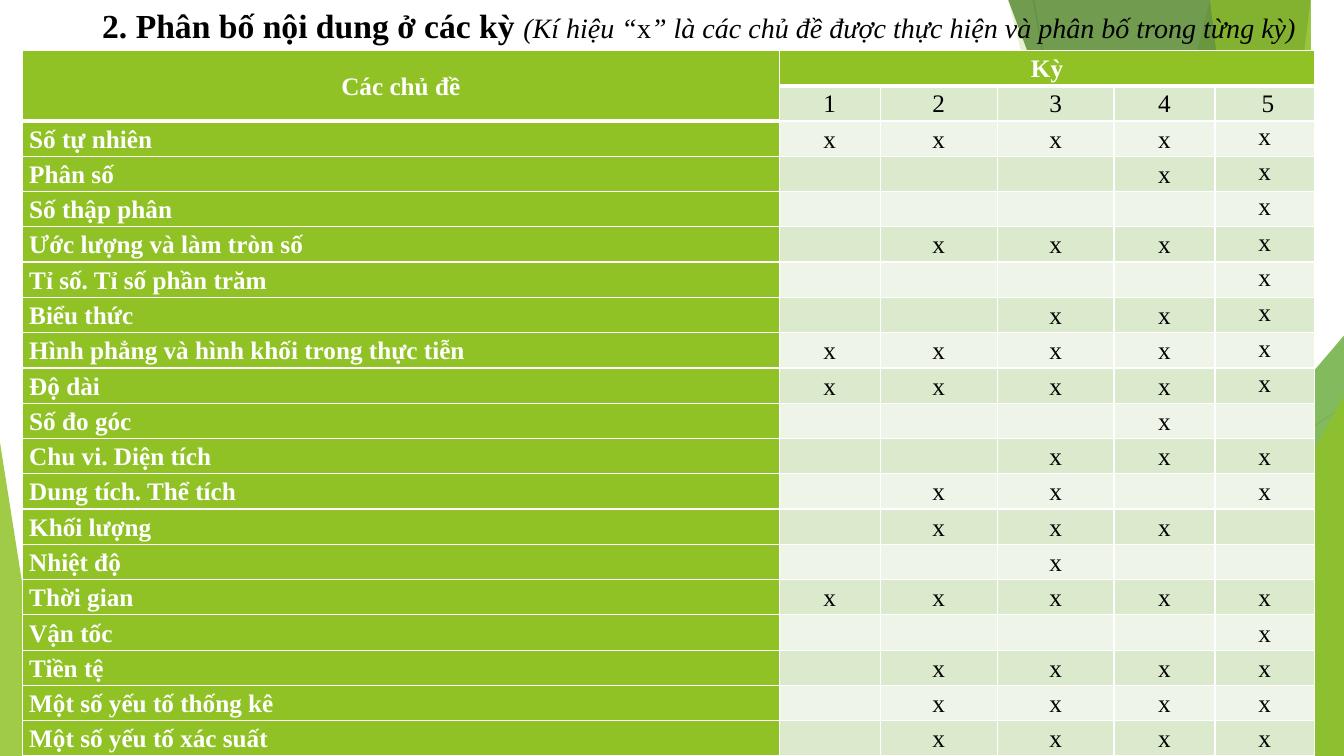
from dataclasses import dataclass
from typing import Optional

import pptx
import pptx.dml.color
import pptx.enum.shapes
import pptx.enum.text
import pptx.oxml
import pptx.oxml.ns
import pptx.util
from pptx.util import Inches

FONT = "Times New Roman"
WHITE, BLACK = "FFFFFF", "000000"
GREEN, DARK_BAND, LIGHT_BAND = "90C226", "DBE9CD", "EEF4E8"
MIDDLE = pptx.enum.text.MSO_ANCHOR.MIDDLE
TOP = pptx.enum.text.MSO_ANCHOR.TOP
CENTER = pptx.enum.text.PP_ALIGN.CENTER
LEFT = pptx.enum.text.PP_ALIGN.LEFT

ROW_HEIGHT = 0.35
COLUMN_WIDTHS = [7.51, 1, 1.16, 1.16, 1, 0.99]
TERMS = ["1", "2", "3", "4", " 5"]
LAST_TOP_ALIGNED_ROW = 9


@dataclass
class Topic:
    name: str
    terms: str


@dataclass
class Ray:
    start: tuple[float, float]
    end: tuple[float, float]
    color: str


@dataclass
class Facet:
    points: list[tuple[float, float]]
    color: str
    opacity: int


@dataclass
class Corner:
    left: float
    top: float
    width: float
    height: float
    apex: float
    color: str
    opacity: int


@dataclass
class TitleRun:
    text: str
    size: int
    bold: bool
    italic: bool


TOPICS = [
    Topic("Số tự nhiên", "12345"),
    Topic("Phân số", "45"),
    Topic("Số thập phân", "5"),
    Topic("Ước lượng và làm tròn số", "2345"),
    Topic("Tỉ số. Tỉ số phần trăm", "5"),
    Topic("Biểu thức", "345"),
    Topic("Hình phẳng và hình khối trong thực tiễn", "12345"),
    Topic("Độ dài", "12345"),
    Topic("Số đo góc", "4"),
    Topic("Chu vi. Diện tích", "345"),
    Topic("Dung tích. Thể tích", "235"),
    Topic("Khối lượng", "234"),
    Topic("Nhiệt độ", "3"),
    Topic("Thời gian", "12345"),
    Topic("Vận tốc", "5"),
    Topic("Tiền tệ", "2345"),
    Topic("Một số yếu tố thống kê", "2345"),
    Topic("Một số yếu tố xác suất", "2345"),
]
RIGHT_EDGE = [(13.33, -0.01), (13.33, 7.5)]
DECORATIONS = [
    Ray((10.25, 0), (11.58, 7.5), "BFBFBF"),
    Ray((13.33, 4.03), (8.12, 7.5), "D9D9D9"),
    Facet([(12.28, -0.01), *RIGHT_EDGE, (10.04, 7.5)], GREEN, 30),
    Facet([(10.5, -0.01), *RIGHT_EDGE, (11.83, 7.5)], GREEN, 20),
    Corner(9.77, 3.33, 3.56, 4.17, 1, "54A021", 72),
    Facet([(10.21, -0.01), *RIGHT_EDGE, (12.91, 7.5)], "3F7819", 70),
    Facet([(13.03, -0.01), *RIGHT_EDGE, (11.92, 7.5)], "C0E474", 70),
    Facet([(11.96, -0.01), *RIGHT_EDGE, (13.18, 7.5)], GREEN, 65),
    Corner(11.34, 3.93, 1.99, 3.57, 1, GREEN, 80),
    Corner(0, 4.39, 0.49, 3.11, 0, GREEN, 85),
]
TITLE_RUNS = [
    TitleRun("2. Phân bố nội dung ở các kỳ ", 24, True, False),
    TitleRun("(Kí hiệu “", 20, False, True),
    TitleRun("x", 20, False, False),
    TitleRun("” là các chủ đề được thực hiện và phân bố trong từng kỳ)", 20, False, True),
]


def rgb(color: str) -> pptx.dml.color.RGBColor:
    return pptx.dml.color.RGBColor.from_string(color)


def add_run(paragraph, text: str, size: int, color: str, bold: bool, italic: bool = False) -> None:
    run = paragraph.add_run()
    run.text = text
    run.font.name, run.font.size = FONT, pptx.util.Pt(size)
    run.font.bold, run.font.italic = bold, italic
    run.font.color.rgb = rgb(color)


def draw_decoration(shapes, item: Ray | Facet | Corner) -> None:
    if isinstance(item, Ray):
        line = shapes.add_connector(pptx.enum.shapes.MSO_CONNECTOR.STRAIGHT,
                                    *map(Inches, item.start + item.end))
        line.line.color.rgb = rgb(item.color)
        line.line.width = pptx.util.Pt(0.75)
        pptx.oxml.ns  # namespace map used by the element below
        line.element.spPr.append(pptx.oxml.parse_xml(
            f'<a:effectLst {pptx.oxml.ns.nsdecls("a")}/>'))
        return
    if isinstance(item, Facet):
        builder = shapes.build_freeform(*item.points[0], scale=Inches(1))
        builder.add_line_segments(item.points[1:], close=True)
        shape = builder.convert_to_shape()
    else:
        shape = shapes.add_shape(
            pptx.enum.shapes.MSO_SHAPE.ISOSCELES_TRIANGLE,
            *map(Inches, (item.left, item.top, item.width, item.height)))
        shape.adjustments[0] = item.apex
    shape.shadow.inherit = False
    shape.line.fill.background()
    shape.fill.solid()
    shape.fill.fore_color.rgb = rgb(item.color)
    color_element = shape.element.spPr.find(".//" + pptx.oxml.ns.qn("a:srgbClr"))
    color_element.append(pptx.oxml.parse_xml(
        f'<a:alpha {pptx.oxml.ns.nsdecls("a")} val="{item.opacity * 1000}"/>'))


def edge_weight(edge: int, column: int) -> int:
    """Points of the horizontal rule above row number `edge`; thick under the header."""
    return 3 if edge == 1 or (edge == 2 and column == 0) else 1


def style_cell(cell, row: int, column: int, fill: str) -> None:
    weights = {"lnL": 1, "lnR": 1, "lnT": edge_weight(row, column),
               "lnB": edge_weight(row + 1, column)}
    properties = cell._tc.get_or_add_tcPr()
    for side, weight in weights.items():
        properties.append(pptx.oxml.parse_xml(
            f'<a:{side} {pptx.oxml.ns.nsdecls("a")} w="{pptx.util.Pt(weight)}">'
            f'<a:solidFill><a:srgbClr val="{WHITE}"/></a:solidFill></a:{side}>'))
    cell.fill.solid()
    cell.fill.fore_color.rgb = rgb(fill)
    cell.margin_left = cell.margin_right = Inches(0.07)
    cell.margin_top = cell.margin_bottom = 0


def cell_text(row: int, column: int) -> Optional[str]:
    if row == 0:
        return {0: "Các chủ đề", 1: "Kỳ"}.get(column)
    if row == 1:
        return TERMS[column - 1] if column else None
    topic = TOPICS[row - 2]
    if column == 0:
        return topic.name
    return "x" if str(column) in topic.terms else None


def add_topic_table(slide) -> None:
    row_count = len(TOPICS) + 2
    table = slide.shapes.add_table(
        row_count, len(COLUMN_WIDTHS), Inches(0.22), Inches(0.5),
        Inches(sum(COLUMN_WIDTHS)), Inches(row_count * ROW_HEIGHT)).table
    table.first_row = table.horz_banding = False
    table.cell(0, 0).merge(table.cell(1, 0))
    table.cell(0, 1).merge(table.cell(0, len(TERMS)))
    for column, width in enumerate(COLUMN_WIDTHS):
        table.columns[column].width = Inches(width)
    for row in range(row_count):
        table.rows[row].height = Inches(ROW_HEIGHT)
        for column in range(len(COLUMN_WIDTHS)):
            cell = table.cell(row, column)
            heading = row == 0 or column == 0
            style_cell(cell, row, column,
                       GREEN if heading else DARK_BAND if row % 2 else LIGHT_BAND)
            raised = column == len(TERMS) and 2 <= row <= LAST_TOP_ALIGNED_ROW
            cell.vertical_anchor = TOP if raised else MIDDLE
            text = cell_text(row, column)
            if text:
                paragraph = cell.text_frame.paragraphs[0]
                paragraph.alignment = LEFT if column == 0 and row > 1 else CENTER
                paragraph.line_spacing = 1.07
                paragraph.space_before = pptx.util.Pt(6)
                add_run(paragraph, text, 18, WHITE if heading else BLACK, heading)


def format_title(title) -> None:
    title.left, title.top, title.width, title.height = map(Inches, (0.53, 0, 12.51, 0.5))
    frame = title.text_frame
    frame.word_wrap = True
    frame.auto_size = pptx.enum.text.MSO_AUTO_SIZE.SHAPE_TO_FIT_TEXT
    frame.vertical_anchor = MIDDLE
    paragraph = frame.paragraphs[0]
    paragraph.alignment = CENTER
    paragraph._p.get_or_add_pPr().set("indent", str(Inches(0.3)))
    for run in TITLE_RUNS:
        add_run(paragraph, run.text, run.size, BLACK, run.bold, run.italic)
    title.element.getparent().append(title.element)


def main() -> None:
    presentation = pptx.Presentation()
    presentation.slide_width, presentation.slide_height = Inches(13.33), Inches(7.5)
    slide = presentation.slides.add_slide(presentation.slide_layouts[5])
    decoration_group = slide.shapes.add_group_shape()
    for item in DECORATIONS:
        draw_decoration(decoration_group.shapes, item)
    add_topic_table(slide)
    format_title(slide.shapes.title)
    presentation.save("out.pptx")


if __name__ == "__main__":
    main()
